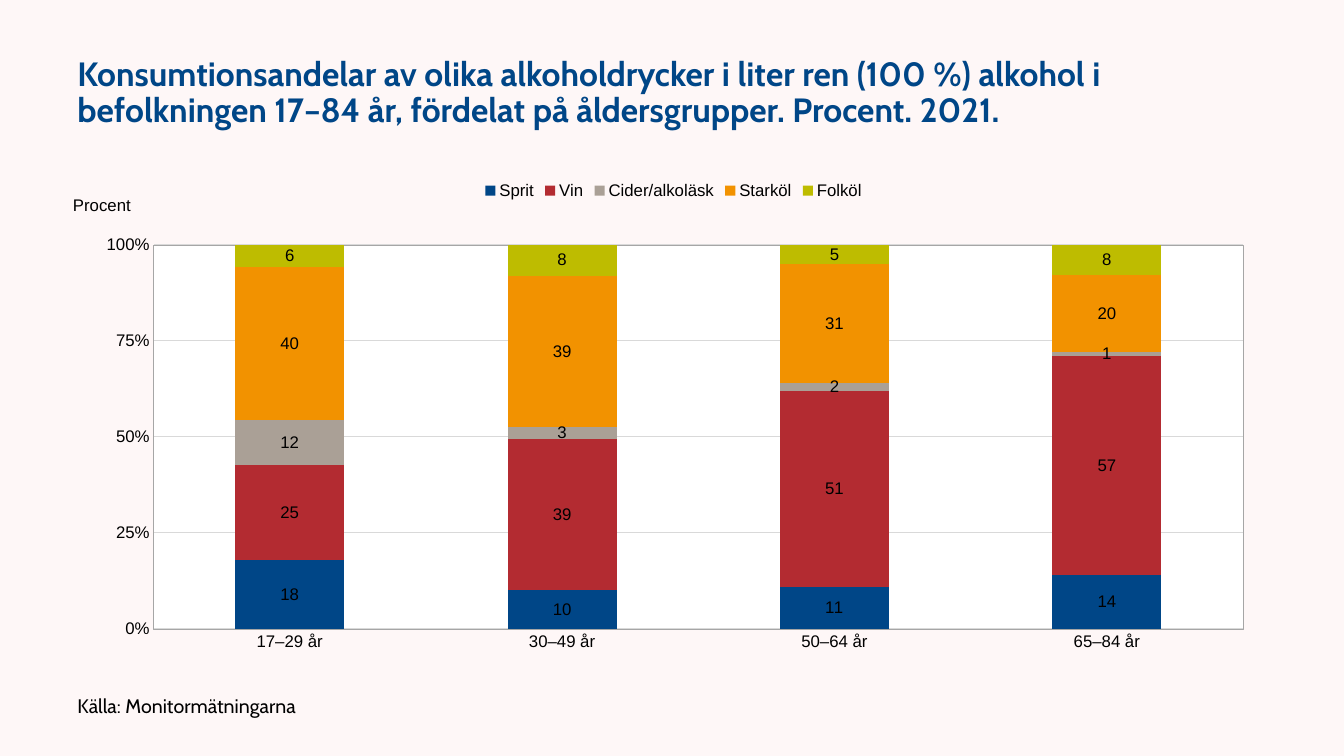
"""Build a slide with a stacked column chart of alcohol consumption by age group."""
from lxml import etree
from pptx import Presentation
from pptx.chart.data import CategoryChartData
from pptx.dml.color import RGBColor
from pptx.enum.chart import (XL_CHART_TYPE as CHART, XL_LABEL_POSITION as LABEL,
                             XL_LEGEND_POSITION as LEGEND, XL_TICK_MARK as TICK)
from pptx.enum.text import MSO_ANCHOR
from pptx.oxml import parse_xml
from pptx.oxml.ns import nsdecls, qn
from pptx.util import Inches, Pt

TITLE = ("Konsumtionsandelar av olika alkoholdrycker i liter ren (100 %) alkohol i "
         "befolkningen 17–84 år, fördelat på åldersgrupper. Procent. 2021.")
SOURCE = "Källa: Monitormätningarna"
AGES = ["17–29 år", "30–49 år", "50–64 år", "65–84 år"]
DRINKS = [
    ("Sprit", "004687", (18, 10, 11, 14)),
    ("Vin", "B32B31", (25, 39, 51, 57)),
    ("Cider/alkoläsk", "AAA096", (12, 3, 2, 1)),
    ("Starköl", "F29200", (40, 39, 31, 20)),
    ("Folköl", "BEBC00", (6, 8, 5, 8)),
]
PLOT = {"x": 0.071, "y": 0.149, "w": 0.899, "h": 0.77}
AXIS_TITLE = {"x": 0.002, "y": 0.043}


def color(value):
    return RGBColor.from_string(value)


def style(font, name, size, value, bold=False):
    font.name, font.size, font.bold = name, Pt(size), bold
    font.color.rgb = color(value)


def outline(line, value, width):
    line.color.rgb = color(value)
    line.width = Pt(width)


def add_text(slide, box, text, size, value, bold=False):
    tf = slide.shapes.add_textbox(*map(Inches, box)).text_frame
    tf.word_wrap = True
    tf.vertical_anchor = MSO_ANCHOR.MIDDLE
    tf.text = text
    p = tf.paragraphs[0]
    p.line_spacing = 0.9
    style(p.runs[0].font, "Cabin", size, value, bold)


def set_layout(parent, index, places, inner=False):
    for old in parent.findall(qn("c:layout")):
        parent.remove(old)
    layout = parse_xml(f"<c:layout {nsdecls('c')}><c:manualLayout/></c:layout>")
    entries = [("layoutTarget", "inner")] if inner else []
    entries += [(f"{key}Mode", "edge") for key in ("x", "y")]
    entries += places.items()
    for tag, value in entries:
        etree.SubElement(layout[0], qn(f"c:{tag}")).set("val", str(value))
    parent.insert(index, layout)


def add_chart(slide):
    data = CategoryChartData(number_format="0")
    data.categories = AGES
    for name, _, values in DRINKS:
        data.add_series(name, values)
    box = map(Inches, (0.67, 1.69, 12.02, 4.95))
    chart = slide.shapes.add_chart(CHART.COLUMN_STACKED_100, *box, data).chart
    style(chart.font, "Arial", 12, "000000")
    chart.has_title = False
    chart.has_legend = True
    chart.legend.position = LEGEND.TOP
    chart.legend.include_in_layout = False
    style(chart.legend.font, "Arial", 12, "000000")

    plot = chart.plots[0]
    plot.gap_width, plot.overlap = 150, 100
    plot.vary_by_categories = False
    for series, (_, fill, _) in zip(plot.series, DRINKS):
        series.format.fill.solid()
        series.format.fill.fore_color.rgb = color(fill)
        labels = series.data_labels
        labels.show_value = True
        labels.position = LABEL.CENTER
        labels.number_format, labels.number_format_is_linked = "0", False
        style(labels.font, "Arial", 12, "000000")

    for axis in (chart.category_axis, chart.value_axis):
        axis.major_tick_mark = axis.minor_tick_mark = TICK.NONE
        outline(axis.format.line, "A6A6A6", 0.25)
        style(axis.tick_labels.font, "Arial", 12, "000000")
    axis = chart.value_axis
    axis.minimum_scale, axis.maximum_scale, axis.major_unit = 0, 1, 0.25
    axis.tick_labels.number_format = "0%"
    axis.tick_labels.number_format_is_linked = False
    axis.has_major_gridlines = True
    outline(axis.major_gridlines.format.line, "D9D9D9", 0.75)

    tf = axis.axis_title.text_frame
    tf.text = "Procent"
    style(tf.paragraphs[0].runs[0].font, "Arial", 12, "000000")
    body = tf._txBody.find(qn("a:bodyPr"))
    body.set("rot", "0")
    body.set("vert", "horz")
    set_layout(axis.axis_title._element, 1, AXIS_TITLE)

    area = chart._chartSpace.chart.plotArea
    set_layout(area, 0, PLOT, inner=True)
    area.append(parse_xml(
        f'<c:spPr {nsdecls("c", "a")}>'
        '<a:solidFill><a:srgbClr val="FFFFFF"/></a:solidFill>'
        '<a:ln w="3175"><a:solidFill><a:srgbClr val="A6A6A6"/></a:solidFill></a:ln>'
        '</c:spPr>'))


def main():
    prs = Presentation()
    prs.slide_width, prs.slide_height = Inches(13.33), Inches(7.5)
    slide = prs.slides.add_slide(prs.slide_layouts[6])
    slide.background.fill.solid()
    slide.background.fill.fore_color.rgb = color("FEF7F7")
    add_text(slide, (0.67, 0.3, 12, 1.25), TITLE, 24, "004687", bold=True)
    add_text(slide, (0.67, 6.83, 6, 0.37), SOURCE, 14, "000000")
    add_chart(slide)
    prs.save("out.pptx")


if __name__ == "__main__":
    main()
